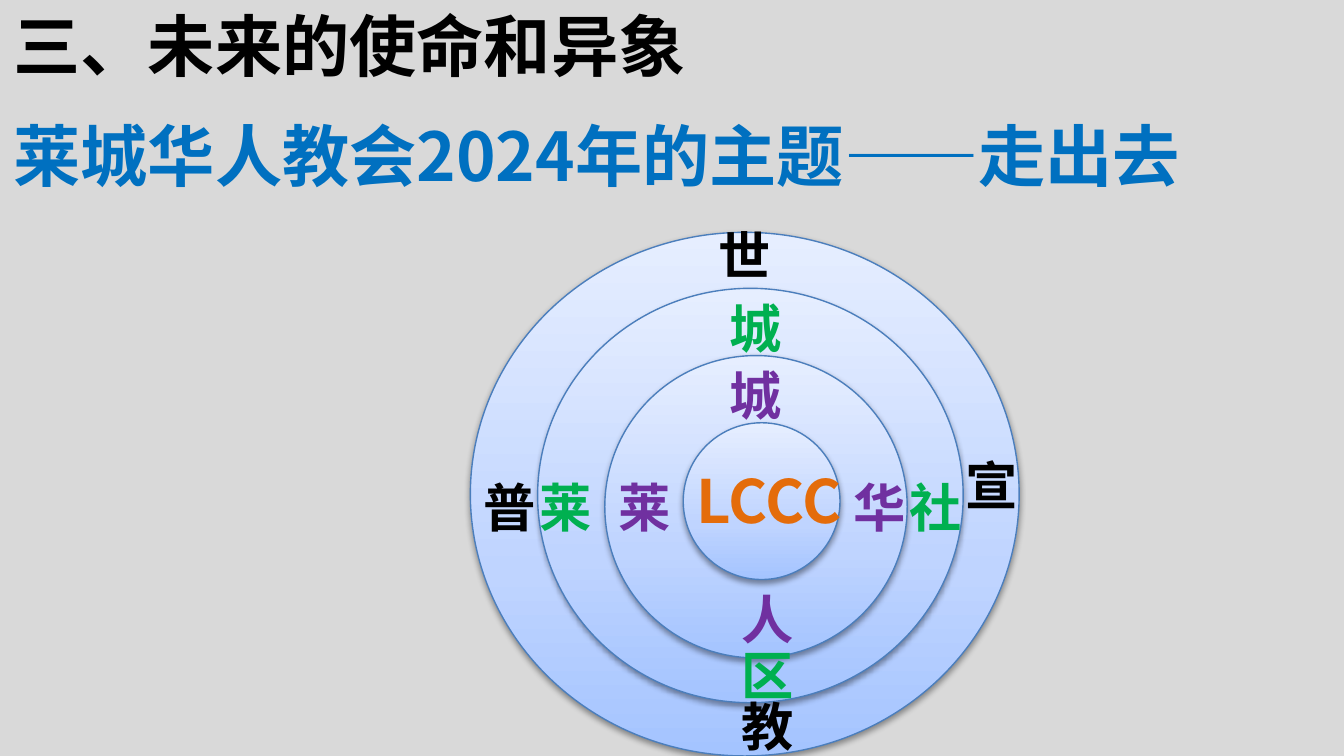
from copy import deepcopy

from lxml.etree import SubElement
from pptx import Presentation
from pptx.dml.color import RGBColor
from pptx.enum.shapes import MSO_SHAPE
from pptx.enum.text import MSO_ANCHOR, MSO_AUTO_SIZE, PP_ALIGN
from pptx.oxml.ns import qn
from pptx.util import Pt

EMU_PER_PX = 9525
FONT_NAME = "Noto Sans CJK SC"

BLACK = RGBColor(0x00, 0x00, 0x00)
GREY = RGBColor(0xD9, 0xD9, 0xD9)
BLUE = RGBColor(0x00, 0x70, 0xC0)
GREEN = RGBColor(0x00, 0xB0, 0x50)
PURPLE = RGBColor(0x70, 0x30, 0xA0)
ORANGE = RGBColor(0xE4, 0x6C, 0x0A)
RING_LINE = RGBColor(0x4B, 0x7E, 0xBC)
RING_STOPS = [
    (0, RGBColor(0xA4, 0xC4, 0xFF)),
    (0.35, RGBColor(0xBF, 0xD4, 0xFF)),
    (1, RGBColor(0xE6, 0xEE, 0xFF)),
]

RINGS = [
    (0, 0, 392, 374),
    (48, 40, 304, 296),
    (96, 88, 216, 216),
    (152, 136, 112, 112),
]
LABELS = [
    ("LCCC", 32, ORANGE, (152, 128, 136, 126)),
    ("莱", 28, PURPLE, (96, 168, 32, 56)),
    ("城", 28, PURPLE, (176, 88, 48, 56)),
    ("华", 28, PURPLE, (264, 168, 48, 56)),
    ("人", 28, PURPLE, (184, 248, 48, 56)),
    ("莱", 28, GREEN, (40, 168, 56, 56)),
    ("城", 28, GREEN, (176, 40, 48, 56)),
    ("社", 28, GREEN, (304, 168, 48, 56)),
    ("区", 28, GREEN, (184, 288, 48, 56)),
    ("普", 28, BLACK, (0, 168, 48, 56)),
    ("世", 28, BLACK, (168, -8, 48, 48)),
    ("宣", 28, BLACK, (344, 152, 56, 56)),
    ("教", 28, BLACK, (184, 320, 48, 64)),
]


def px(length):
    return length * EMU_PER_PX


def place(box, part):
    left, top = box[:2]
    x, y, width, height = part
    return px(left + x), px(top + y), px(width), px(height)


def add_run(paragraph, text, size, color):
    run = paragraph.add_run()
    run.text = text
    run.font.size = Pt(size)
    run.font.bold = True
    run.font.name = FONT_NAME
    run.font.color.rgb = color
    SubElement(run.font._element, qn("a:ea"), typeface=FONT_NAME)


def add_ring(slide, box, part):
    shape = slide.shapes.add_shape(MSO_SHAPE.FLOWCHART_CONNECTOR, *place(box, part))
    shape.fill.gradient()
    shape.fill.gradient_angle = 90
    stop_list = shape._element.spPr.find(".//" + qn("a:gsLst"))
    stop_list.append(deepcopy(stop_list[0]))
    for stop, (position, color) in zip(shape.fill.gradient_stops, RING_STOPS):
        stop.position = position
        stop.color.rgb = color
    shape.line.color.rgb = RING_LINE
    shape.line.width = Pt(0.75)
    shape.shadow.inherit = False
    effects = shape._element.spPr.find(qn("a:effectLst"))
    shadow = SubElement(effects, qn("a:outerShdw"), blurRad="40000", dist="20000",
                        dir="5400000", rotWithShape="0")
    shadow_color = SubElement(shadow, qn("a:srgbClr"), val=str(BLACK))
    SubElement(shadow_color, qn("a:alpha"), val="38000")


def add_label(slide, box, part, text, size, color):
    frame = slide.shapes.add_textbox(*place(box, part)).text_frame
    frame.word_wrap = True
    frame.vertical_anchor = MSO_ANCHOR.MIDDLE
    add_run(frame.paragraphs[0], text, size, color)


def fill_title(slide, box):
    title = slide.shapes.title
    title.left, title.top, title.width, title.height = map(px, box)
    frame = title.text_frame
    frame.word_wrap = True
    frame.auto_size = MSO_AUTO_SIZE.NONE
    frame.vertical_anchor = MSO_ANCHOR.MIDDLE
    heading = frame.paragraphs[0]
    heading.alignment = PP_ALIGN.LEFT
    add_run(heading, "三、未来的使命和异象", 36, BLACK)
    theme = frame.add_paragraph()
    theme.alignment = PP_ALIGN.LEFT
    theme.space_before = Pt(16)
    add_run(theme, "莱城华人教会2024年的主题——走出去", 36, BLUE)


def draw_mission_circles(slide, box):
    for ring in RINGS:
        add_ring(slide, box, ring)
    for text, size, color, part in LABELS:
        add_label(slide, box, part, text, size, color)


def main():
    presentation = Presentation()
    presentation.slide_width = px(960)
    presentation.slide_height = px(540)
    slide = presentation.slides.add_slide(presentation.slide_layouts[5])
    slide.background.fill.solid()
    slide.background.fill.fore_color.rgb = GREY
    fill_title(slide, (0, 0, 960, 142))
    draw_mission_circles(slide, (336, 166, 392, 374))
    presentation.save("out.pptx")


if __name__ == "__main__":
    main()
